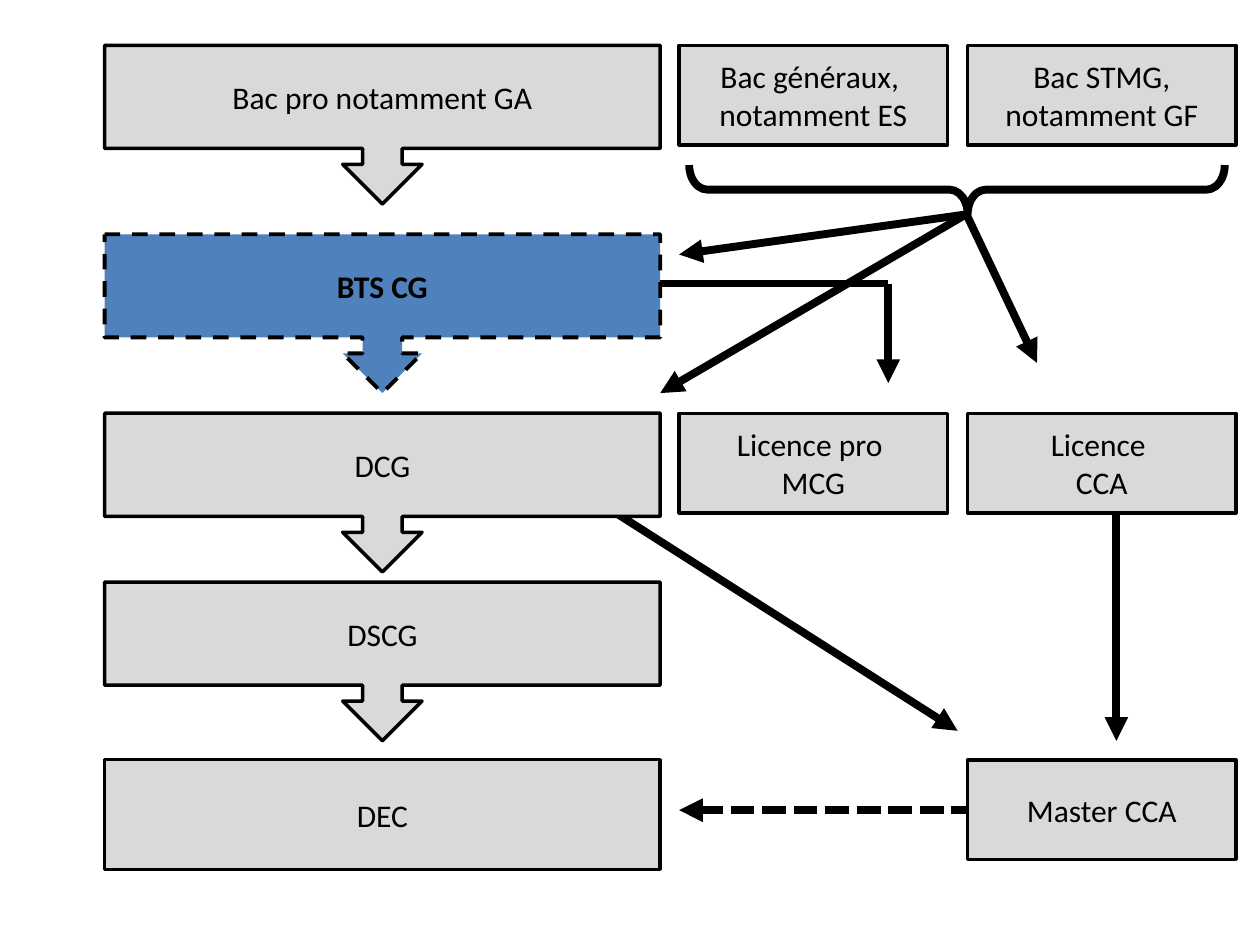
from pptx import Presentation
from pptx.dml.color import RGBColor as Rgb
from pptx.enum.dml import MSO_LINE as Dash
from pptx.enum.shapes import MSO_CONNECTOR as Conn, MSO_SHAPE as Geo
from pptx.enum.text import MSO_ANCHOR as Anchor, PP_ALIGN as Align
from pptx.oxml.ns import qn
from pptx.util import Inches, Pt
from lxml.etree import SubElement

COLORS = {"gray": "D9D9D9", "blue": "4F81BD", "black": "000000"}
INK = Rgb.from_string(COLORS["black"])

deck = Presentation()
deck.slide_width, deck.slide_height = Inches(10), Inches(7.5)
slide = deck.slides.add_slide(deck.slide_layouts[6])


def add_box(geo, x, y, w, h, lines, fill="gray", dash=False):
    box = slide.shapes.add_shape(geo, Inches(x), Inches(y), Inches(w), Inches(h))
    box.shadow.inherit = False
    box.fill.solid()
    box.fill.fore_color.rgb = Rgb.from_string(COLORS[fill])
    box.line.color.rgb = INK
    box.line.width = Pt(2.25 if dash else 2)
    if dash:
        box.line.dash_style = Dash.DASH
    frame = box.text_frame
    frame.word_wrap = True
    frame.vertical_anchor = Anchor.MIDDLE
    for i, line in enumerate(lines):
        para = frame.add_paragraph() if i else frame.paragraphs[0]
        para.alignment = Align.CENTER
        run = para.add_run()
        run.text = line
        run.font.name = "Calibri"
        run.font.size = Pt(18)
        run.font.bold = dash
        run.font.color.rgb = INK


def add_link(x1, y1, x2, y2, head=True, dash=False):
    link = slide.shapes.add_connector(
        Conn.STRAIGHT, Inches(x1), Inches(y1), Inches(x2), Inches(y2))
    link.line.color.rgb = INK
    link.line.width = Pt(4.5)
    if dash:
        link.line.dash_style = Dash.SQUARE_DOT
    if head:
        SubElement(link.line._get_or_add_ln(), qn("a:tailEnd"), type="triangle")
    SubElement(link._element.spPr, qn("a:effectLst"))


# Column and row positions
LEFT, MID, RIGHT = 0.83, 5.39, 7.68
TOP, DEGREE, LAST = 0.36, 3.28, 6.03
WIDE, SLIM = 4.41, 2.13

# Links that start behind the boxes
add_link(7.05, 2.25, 7.05, 3.04)
add_link(4.84, 2.25, 7.05, 2.25, head=False)
add_link(RIGHT, 1.7, MID, 2.02)
add_link(4.76, 3.99, 7.6, 5.8)
add_link(8.86, 3.99, 8.86, 5.88)
add_link(7.99, 6.43, MID, 6.43, dash=True)

# Main path, from Bac pro down to DEC
for y, text, fill, dash in [
    (TOP, "Bac pro notamment GA", "gray", False),
    (1.86, "BTS CG", "blue", True),
    (DEGREE, "DCG", "gray", False),
    (4.62, "DSCG", "gray", False),
]:
    add_box(Geo.DOWN_ARROW_CALLOUT, LEFT, y, WIDE, 1.26, [text], fill, dash)
add_box(Geo.RECTANGLE, LEFT, LAST, WIDE, 0.87, ["DEC"])

# Side paths
for x, y, lines in [
    (MID, TOP, ["Bac généraux, ", "notamment ES"]),
    (RIGHT, TOP, ["Bac STMG, notamment GF"]),
    (MID, DEGREE, ["Licence pro ", "MCG"]),
    (RIGHT, DEGREE, ["Licence ", "CCA"]),
    (RIGHT, LAST, ["Master CCA"]),
]:
    add_box(Geo.RECTANGLE, x, y, SLIM, 0.79, lines)

# Brace under the two side Bacs
brace = slide.shapes.add_shape(
    Geo.LEFT_BRACE, Inches(7.4), Inches(-0.62), Inches(0.39), Inches(4.25))
brace.rotation = 270
brace.adjustments[0], brace.adjustments[1] = 0.37, 0.52
brace.shadow.inherit = False
brace.fill.background()
brace.line.color.rgb = INK
brace.line.width = Pt(4.5)

# Links from the brace to the degrees
add_link(7.67, 1.7, 8.23, 2.88)
add_link(7.67, 1.7, 5.24, 3.12)

deck.save("out.pptx")
